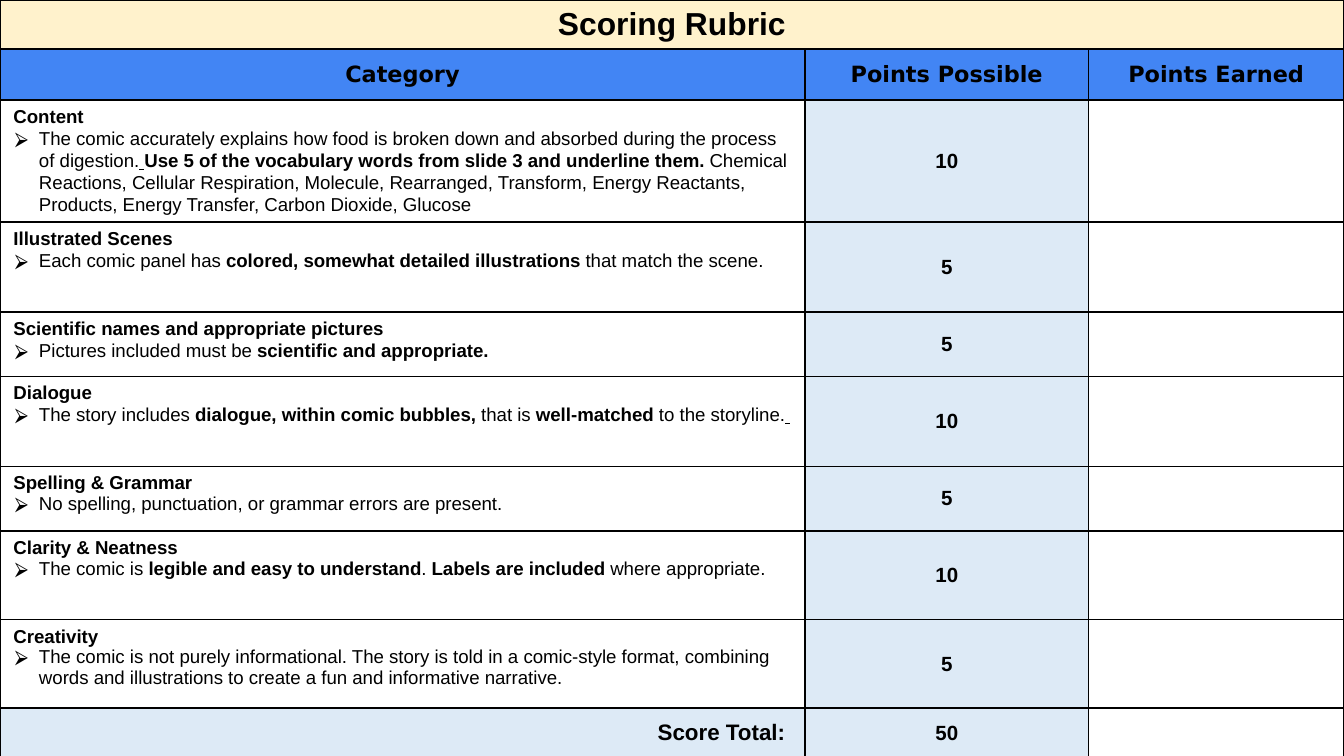
from pptx import Presentation
from pptx.dml.color import RGBColor as RGB
from pptx.enum.text import MSO_ANCHOR as Anchor, PP_ALIGN as Align
from pptx.oxml.ns import qn
from pptx.util import Inches, Pt
from lxml.etree import SubElement as Sub

# Content: heading, bullet runs (text, style: b bold, u underlined), points
TITLE = "Scoring Rubric"
HEADS = ["Category", "Points Possible", "Points Earned"]
ITEMS = [
    ("Content", [
        ("The comic accurately explains how food is broken down and absorbed "
         "during the process of digestion.", ""),
        (" ", "u"),
        ("Use 5 of the vocabulary words from slide 3 and underline them. ", "b"),
        ("Chemical Reactions, Cellular Respiration, Molecule, Rearranged, "
         "Transform, Energy Reactants, Products, Energy Transfer, "
         "Carbon Dioxide, Glucose", "")], 10),
    ("Illustrated Scenes", [
        ("Each comic panel has ", ""),
        ("colored, somewhat detailed illustrations", "b"),
        (" that match the scene.", "")], 5),
    ("Scientific names and appropriate pictures", [
        ("Pictures included must be ", ""),
        ("scientific and appropriate.", "b")], 5),
    ("Dialogue", [
        ("The story includes ", ""),
        ("dialogue, within comic bubbles, ", "b"),
        ("that is ", ""),
        ("well-matched ", "b"),
        ("to the storyline.", ""),
        (" ", "u")], 10),
    ("Spelling & Grammar", [
        ("No spelling, punctuation, or grammar errors are present.", "")], 5),
    ("Clarity & Neatness", [
        ("The comic is ", ""),
        ("legible and easy to understand", "b"),
        (". ", ""),
        ("Labels are included ", "b"),
        ("where appropriate.", "")], 10),
    ("Creativity", [
        ("The comic is not purely informational. The story is told in a "
         "comic-style format, combining words and illustrations to create a "
         "fun and informative narrative.", "")], 5),
]
TOTAL = "Score Total: "
LOOSE = 4  # the first bullets have wider line spacing

COLS = [5.99, 2.11, 1.9]
ROWS = [0.2, 0.38, 0.87, 0.67, 0.48, 0.67, 0.48, 0.66, 0.66, 0.37]
CREAM, BLUE, PALE, WHITE, BLACK = "FFF2CC", "4285F4", "DDEAF6", "FFFFFF", "000000"


def color(code):
    return RGB.from_string(code)


def paint(cell, code):
    cell.fill.solid()
    cell.fill.fore_color.rgb = color(code)


def frame(cell):
    props = cell._tc.get_or_add_tcPr()
    for i, side in enumerate(["lnL", "lnR", "lnT", "lnB"]):
        line = props.makeelement(qn("a:" + side), {"w": str(Pt(1))})
        fill = Sub(line, qn("a:solidFill"))
        Sub(fill, qn("a:srgbClr"), val=BLACK)
        props.insert(i, line)


def add_run(para, text, size, style="b", face="Arial"):
    run = para.add_run()
    run.text = text
    font = run.font
    font.name, font.size = face, Pt(size)
    font.bold, font.underline = "b" in style, "u" in style
    font.color.rgb = color(BLACK)


def bullet(para):
    props = para._p.get_or_add_pPr()
    props.set("marL", str(Inches(0.19)))
    props.set("indent", str(Inches(-0.18)))
    tint = Sub(props, qn("a:buClr"))
    Sub(tint, qn("a:srgbClr"), val=BLACK)
    Sub(props, qn("a:buFont"), typeface="Arial")
    Sub(props, qn("a:buChar"), char="⮚")


def label(cell, text, size, align=Align.CENTER, face="Arial"):
    cell.vertical_anchor = Anchor.MIDDLE
    para = cell.text_frame.paragraphs[0]
    para.alignment = align
    add_run(para, text, size, face=face)


# Slide (16:9) and table
prs = Presentation()
prs.slide_width = Inches(10)
prs.slide_height = Inches(10) * 9 // 16
slide = prs.slides.add_slide(prs.slide_layouts[6])
slide.background.fill.solid()
slide.background.fill.fore_color.rgb = color(CREAM)
table = slide.shapes.add_table(len(ROWS), len(COLS), 0, 0,
                               Inches(sum(COLS)), Inches(sum(ROWS))).table
table.first_row = table.horz_banding = False
for col, width in zip(table.columns, COLS):
    col.width = Inches(width)
for row, height in zip(table.rows, ROWS):
    row.height = Inches(height)

# Fills and borders
last = len(ROWS) - 1
for r in range(len(ROWS)):
    for c in range(len(COLS)):
        cell = table.cell(r, c)
        if r == 0:
            cell.fill.background()
        elif r == 1:
            paint(cell, BLUE)
        else:
            paint(cell, PALE if c == 1 or (r == last and c == 0) else WHITE)
        frame(cell)
        if c == 2 and r > 1:  # small empty line keeps the row height
            Sub(cell.text_frame.paragraphs[0]._p, qn("a:endParaRPr"), sz="1000")

# Title and headings
top = table.cell(0, 0)
top.merge(table.cell(0, 2))
label(top, TITLE, 17)
top.vertical_anchor = Anchor.TOP
for c, head in enumerate(HEADS):
    label(table.cell(1, c), head, 12, face="DejaVu Sans")

# Criteria
for i, (name, runs, points) in enumerate(ITEMS):
    text = table.cell(i + 2, 0).text_frame
    add_run(text.paragraphs[0], name, 10)
    para = text.add_paragraph()
    bullet(para)
    if i < LOOSE:
        para.line_spacing = 1.05
    for words, style in runs:
        add_run(para, words, 10, style)
    label(table.cell(i + 2, 1), str(points), 11)

# Total
label(table.cell(last, 0), TOTAL, 12, Align.RIGHT)
label(table.cell(last, 1), str(sum(item[2] for item in ITEMS)), 11)

prs.save("out.pptx")
